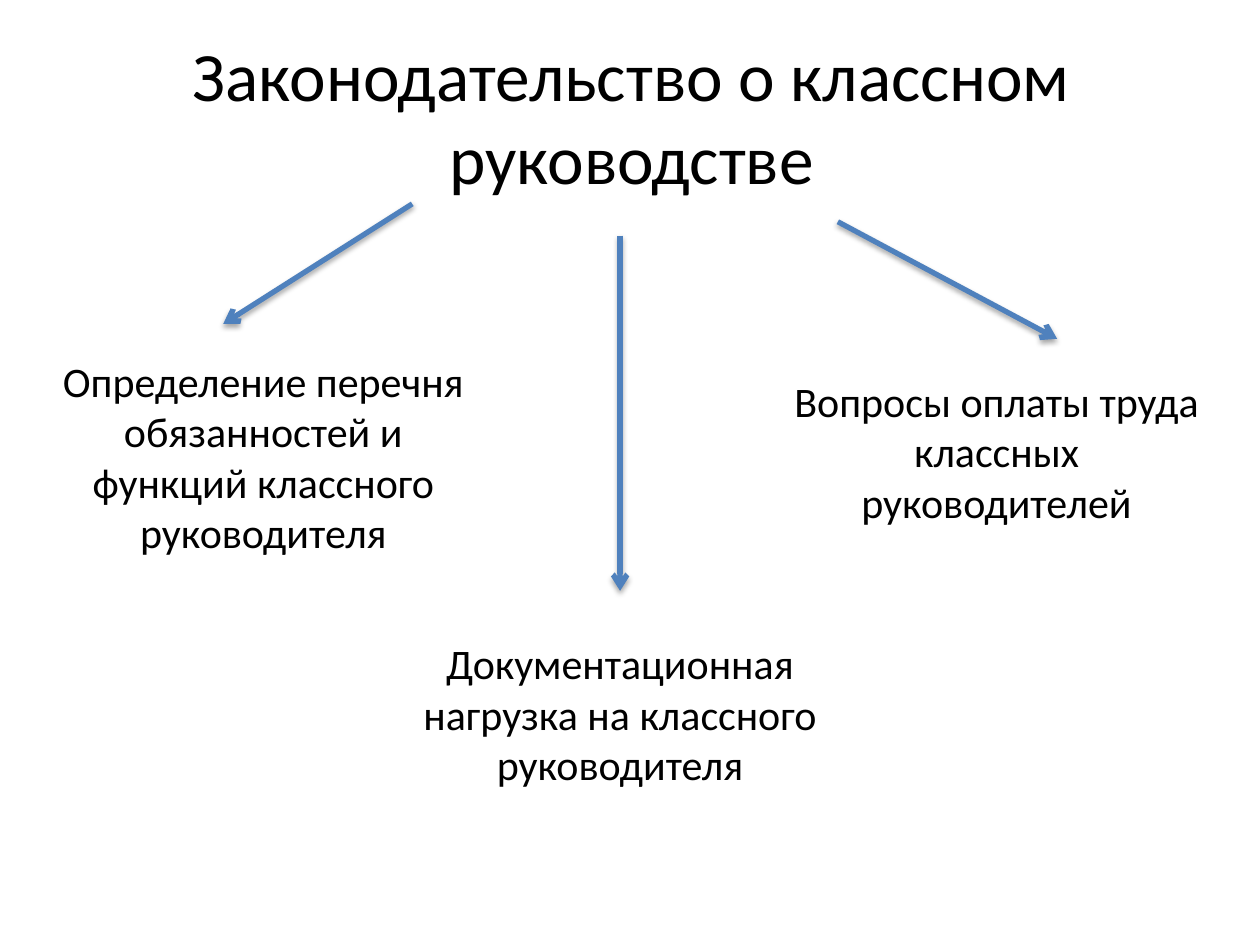
from lxml.etree import SubElement
from pptx import Presentation
from pptx.dml.color import RGBColor
from pptx.enum.shapes import MSO_CONNECTOR
from pptx.enum.text import MSO_ANCHOR, MSO_AUTO_SIZE, PP_ALIGN
from pptx.oxml.ns import qn
from pptx.util import Cm, Pt

COLORS = {"background": "FFFFFF", "text": "000000", "arrow": "4F81BD", "shadow": "000000"}
FONT = "Calibri"
HEADING = "Законодательство о классном руководстве"
TOPIC_WIDTH = 9.2
TOPICS = [
    {
        "text": "Определение перечня обязанностей и функций классного руководителя",
        "corner": (0.71, 7.04), "height": 4.37,
        "arrow": ((8.31, 4.11), (4.5, 6.53)),
    },
    {
        "text": "Вопросы оплаты труда классных руководителей",
        "corner": (15.49, 7.44), "height": 3.33,
        "arrow": ((16.89, 4.47), (21.31, 6.83)),
    },
    {
        "text": "Документационная нагрузка на классного руководителя",
        "corner": (7.9, 12.73), "height": 3.33,
        "arrow": ((12.5, 4.75), (12.5, 11.91)),
    },
]


def write(frame, text, *, size, anchor=MSO_ANCHOR.TOP, fit=MSO_AUTO_SIZE.NONE):
    frame.word_wrap = True
    frame.auto_size = fit
    frame.vertical_anchor = anchor
    paragraph = frame.paragraphs[0]
    paragraph.alignment = PP_ALIGN.CENTER
    run = paragraph.add_run()
    run.text = text
    run.font.name = FONT
    run.font.size = Pt(size)
    run.font.color.rgb = RGBColor.from_string(COLORS["text"])


def draw_arrow(slide, start, end):
    arrow = slide.shapes.add_connector(
        MSO_CONNECTOR.STRAIGHT, *(Cm(value) for value in start + end)
    )
    arrow.line.color.rgb = RGBColor.from_string(COLORS["arrow"])
    arrow.line.width = Pt(3)
    SubElement(arrow.line._get_or_add_ln(), qn("a:tailEnd"), type="arrow")
    effects = SubElement(arrow._element.spPr, qn("a:effectLst"))
    shadow = SubElement(
        effects, qn("a:outerShdw"), blurRad=str(Pt(3.1)), dist=str(Pt(1.8)),
        dir="5400000", rotWithShape="0",
    )
    shade = SubElement(shadow, qn("a:srgbClr"), val=COLORS["shadow"])
    SubElement(shade, qn("a:alpha"), val="35000")


def main():
    deck = Presentation()
    deck.slide_width, deck.slide_height = Cm(25.4), Cm(19.05)
    slide = deck.slides.add_slide(deck.slide_layouts[5])
    background = slide.background.fill
    background.solid()
    background.fore_color.rgb = RGBColor.from_string(COLORS["background"])

    heading = slide.shapes.title
    heading.left, heading.top = Cm(1.3), Cm(0.74)
    heading.width, heading.height = Cm(22.86), Cm(3.18)
    write(heading.text_frame, HEADING, size=39.6, anchor=MSO_ANCHOR.MIDDLE)

    for topic in TOPICS:
        draw_arrow(slide, *topic["arrow"])
        left, top = topic["corner"]
        label = slide.shapes.add_textbox(
            Cm(left), Cm(top), Cm(TOPIC_WIDTH), Cm(topic["height"])
        )
        write(label.text_frame, topic["text"], size=24, fit=MSO_AUTO_SIZE.SHAPE_TO_FIT_TEXT)

    deck.save("out.pptx")


if __name__ == "__main__":
    main()
